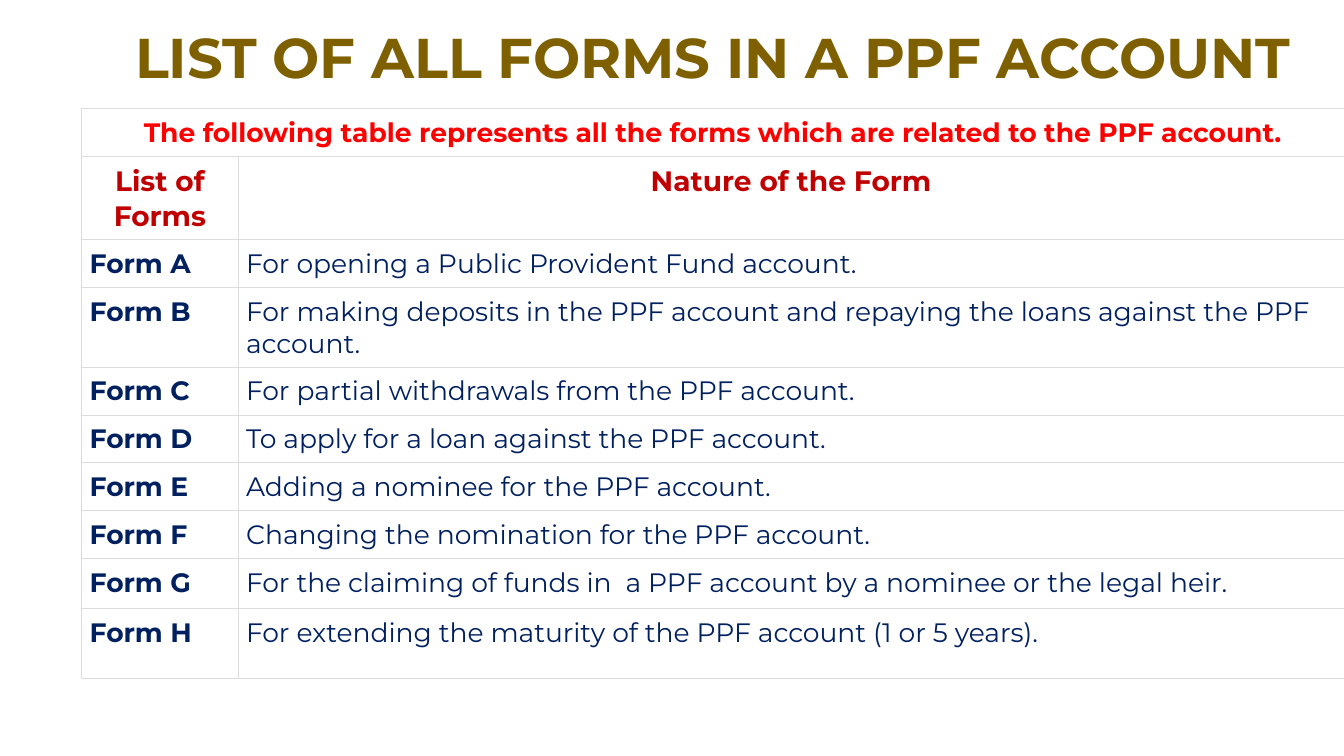
"""Build a slide listing the forms used with a PPF account."""
from lxml import etree
from pptx import Presentation, util as u
from pptx.dml.color import RGBColor
from pptx.enum import text
from pptx.oxml.ns import qn

TITLE = "LIST OF ALL FORMS IN A PPF ACCOUNT"
CAPTION = "The following table represents all the forms which are related to the PPF account."
HEADERS = ("List of Forms", "Nature of the Form")
FORMS = [
    ("Form A", "For opening a Public Provident Fund account."),
    ("Form B", "For making deposits in the PPF account and repaying the loans against the PPF account."),
    ("Form C", "For partial withdrawals from the PPF account."),
    ("Form D", "To apply for a loan against the PPF account."),
    ("Form E", "Adding a nominee for the PPF account."),
    ("Form F", "Changing the nomination for the PPF account."),
    ("Form G", "For the claiming of funds in  a PPF account by a nominee or the legal heir."),
    ("Form H", "For extending the maturity of the PPF account (1 or 5 years)."),
]

THEME = {
    "font": "Montserrat",
    "border": "DDDDDD",
    "title": {"size": 40, "color": "7F6000", "bold": True},
    "caption": {"size": 19, "color": "FF0000", "bold": True},
    "header": {"size": 20, "color": "C00000", "bold": True},
    "label": {"size": 19, "color": "002060", "bold": True},
    "body": {"size": 19, "color": "002060", "bold": False},
}

SLIDE_W, SLIDE_H = u.Cm(33.87), u.Cm(19.05)
LEFT, TABLE_TOP, TITLE_H = u.Cm(2.06), u.Cm(2.74), u.Cm(3.05)
WIDTH = SLIDE_W - LEFT
LABEL_W = u.Cm(3.94)
ROW_HEIGHTS = [1.04, 1.04, 1.14, 1.93, 1.14, 1.14, 1.14, 1.14, 1.27, 1.75]
CELL_MARGIN = u.Cm(0.2)
SIDES = ("left", "right", "top", "bottom")


def write(tf, words, style, centered):
    """Put one styled paragraph in a text frame."""
    p = tf.paragraphs[0]
    p.alignment = text.PP_ALIGN.CENTER if centered else text.PP_ALIGN.LEFT
    r = p.add_run()
    r.text = words
    look = THEME[style]
    values = {"name": THEME["font"], "size": u.Pt(look["size"]), "bold": look["bold"]}
    for name, value in values.items():
        setattr(r.font, name, value)
    r.font.color.rgb = RGBColor.from_string(look["color"])
    return p


def add_borders(cell):
    """Draw a thin line on every side of a cell."""
    props = cell._tc.get_or_add_tcPr()
    for i, tag in enumerate(("a:lnL", "a:lnR", "a:lnT", "a:lnB")):
        ln = etree.Element(qn(tag), w=str(u.Pt(0.75)))
        fill = etree.SubElement(ln, qn("a:solidFill"))
        etree.SubElement(fill, qn("a:srgbClr"), val=THEME["border"])
        props.insert(i, ln)


def add_title(s):
    """Add the slide heading."""
    tf = s.shapes.add_textbox(LEFT, 0, WIDTH, TITLE_H).text_frame
    tf.word_wrap = True
    tf.vertical_anchor = text.MSO_ANCHOR.MIDDLE
    write(tf, TITLE, "title", True).line_spacing = 0.9


def add_forms(s):
    """Add the table of forms."""
    rows = [(CAPTION, ""), HEADERS, *FORMS]
    heights = [u.Cm(h) for h in ROW_HEIGHTS]
    table = s.shapes.add_table(len(rows), 2, LEFT, TABLE_TOP, WIDTH, sum(heights)).table
    table.first_row = table.horz_banding = False
    for column, width in zip(table.columns, (LABEL_W, WIDTH - LABEL_W)):
        column.width = width
    styles = [("caption",) * 2, ("header",) * 2] + [("label", "body")] * len(FORMS)
    for i, row in enumerate(rows):
        table.rows[i].height = heights[i]
        for j, words in enumerate(row):
            cell = table.cell(i, j)
            for side in SIDES:
                setattr(cell, f"margin_{side}", CELL_MARGIN)
            cell.fill.background()
            add_borders(cell)
            if words:
                write(cell.text_frame, words, styles[i][j], i < 2)
    table.cell(0, 0).merge(table.cell(0, 1))


def main():
    """Create and save the presentation."""
    prs = Presentation()
    prs.slide_width, prs.slide_height = SLIDE_W, SLIDE_H
    s = prs.slides.add_slide(prs.slide_layouts[6])
    add_title(s)
    add_forms(s)
    prs.save("out.pptx")


if __name__ == "__main__":
    main()
